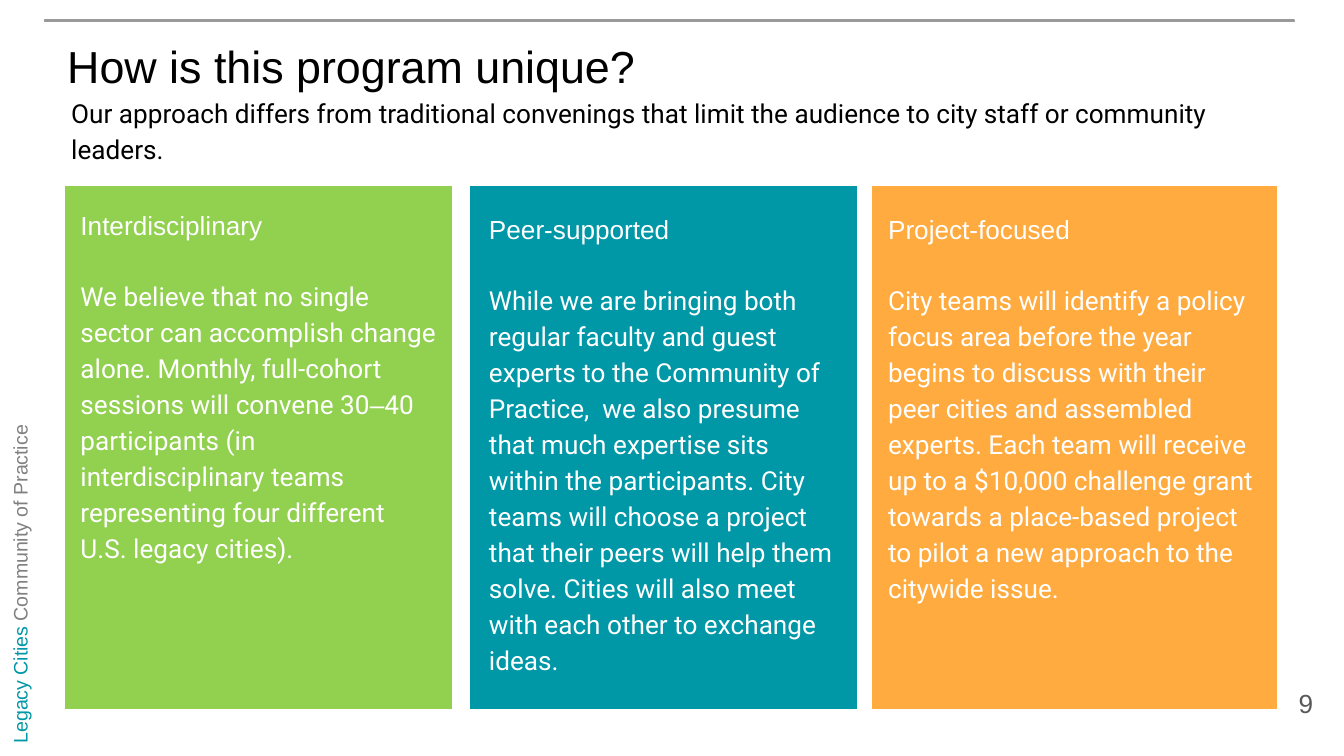
from pptx import Presentation
from pptx import util as u
from pptx.dml.color import RGBColor
from pptx.enum import shapes, text
from pptx.oxml.xmlchemy import OxmlElement

BLACK = RGBColor(0x00, 0x00, 0x00)
WHITE = RGBColor(0xFF, 0xFF, 0xFF)
TEAL = RGBColor(0x00, 0x97, 0xA7)
GREEN = RGBColor(0x92, 0xD0, 0x50)
ORANGE = RGBColor(0xFF, 0xAB, 0x40)
GRAY = RGBColor(0x80, 0x80, 0x80)
DARK_GRAY = RGBColor(0x59, 0x59, 0x59)
RULE_FILL = RGBColor(0xB7, 0xB7, 0xB7)
RULE_LINE = RGBColor(0x99, 0x99, 0x99)
INSET = u.Inches(0.1)
FRAME = {
    "word_wrap": True, "auto_size": text.MSO_AUTO_SIZE.NONE,
    "vertical_anchor": text.MSO_ANCHOR.TOP,
    "margin_left": INSET, "margin_top": INSET,
    "margin_right": INSET, "margin_bottom": INSET,
}
PARAGRAPH = {"alignment": text.PP_ALIGN.LEFT, "line_spacing": 1.0,
             "space_before": u.Pt(0), "space_after": u.Pt(0)}


def write(box, at, paragraphs, size, **formats):
    box.left, box.top, box.width, box.height = map(u.Inches, at)
    frame = box.text_frame
    for name, value in FRAME.items():
        setattr(frame, name, value)
    for index, runs in enumerate(paragraphs):
        para = frame.add_paragraph() if index else frame.paragraphs[0]
        for name, value in (PARAGRAPH | formats).items():
            setattr(para, name, value)
        for words, font, color in runs:
            span = para.add_run()
            span.text = words
            span.font.name = font
            span.font.size = u.Pt(size)
            span.font.color.rgb = color
    return frame


def add_block(at, fill, line):
    block = page.shapes.add_shape(shapes.MSO_SHAPE.RECTANGLE, *map(u.Inches, at))
    block.shadow.inherit = False
    block.fill.solid()
    block.fill.fore_color.rgb = fill
    block.line.color.rgb = line
    block.line.width = u.Pt(0.75)


deck = Presentation()
deck.slide_width = u.Inches(10)
deck.slide_height = u.Inches(10 * 9 / 16)
page = deck.slides.add_slide(deck.slide_layouts[1])
title, intro = page.placeholders

write(title, (0.4, 0.19, 9.23, 0.47),
      [[("How is this program unique?", "Arial", BLACK)]], 24)
frame = write(intro, (0.43, 0.59, 8.98, 2.81), [[(
    "Our approach differs from traditional convenings that limit the audience "
    "to city staff or community leaders.", "Roboto", BLACK)]], 14, line_spacing=1.15)
properties = frame.paragraphs[0]._p.get_or_add_pPr()
properties.set("marL", "0")
properties.set("indent", "0")
properties.append(OxmlElement("a:buNone"))

add_block((0.33, 0.15, 9.3, 0.01), RULE_FILL, RULE_LINE)

program = page.shapes.add_textbox(0, 0, 0, 0)
write(program, (-1.81, 3.39, 4.01, 0.47),
      [[("Legacy Cities ", "Arial", TEAL), ("Community of Practice", "Arial", GRAY)]], 10.5)
program.rotation = 270

number = page.shapes.add_textbox(0, 0, 0, 0)
frame = write(number, (9.27, 5.02, 0.6, 0.43), [[("9", "Arial", DARK_GRAY)]], 14,
              alignment=text.PP_ALIGN.RIGHT)
frame.vertical_anchor = text.MSO_ANCHOR.MIDDLE

cards = [
    (0.48, 2.89, GREEN, (0.5, 1.42, 2.85, 3.83), "Interdisciplinary", [
        ("We believe that no single sector can accomplish change alone. Monthly, "
         "full-cohort sessions will convene 30", "Roboto"),
        ("–", "Arial"),
        ("40 participants (in interdisciplinary teams representing four different "
         "U.S. legacy cities).", "Roboto")]),
    (3.49, 2.89, TEAL, (3.54, 1.45, 2.8, 3.68), "Peer-supported", [
        ("While we are bringing both regular faculty and guest experts to the "
         "Community of Practice,  we also presume that much expertise sits within "
         "the participants. City teams will choose a project that their peers will "
         "help them solve. Cities will also meet with each other to exchange ideas.",
         "Roboto")]),
    (6.48, 3.03, ORANGE, (6.51, 1.45, 2.93, 3.26), "Project-focused", [
        ("City teams will identify a policy focus area before the year begins to "
         "discuss with their peer cities and assembled experts. Each team will "
         "receive up to a $10,000 challenge grant towards a place-based project to "
         "pilot a new approach to the citywide issue.", "Roboto")]),
]
for left, width, color, text_at, heading, body in cards:
    add_block((left, 1.38, width, 3.9), color, WHITE)
    box = page.shapes.add_textbox(0, 0, 0, 0)
    frame = write(box, text_at, [
        [(heading, "Arial", WHITE)],
        [(words, font, WHITE) for words, font in body],
    ], 14, line_spacing=1.15)
    frame.paragraphs[1].space_before = u.Pt(19)

deck.save("out.pptx")
